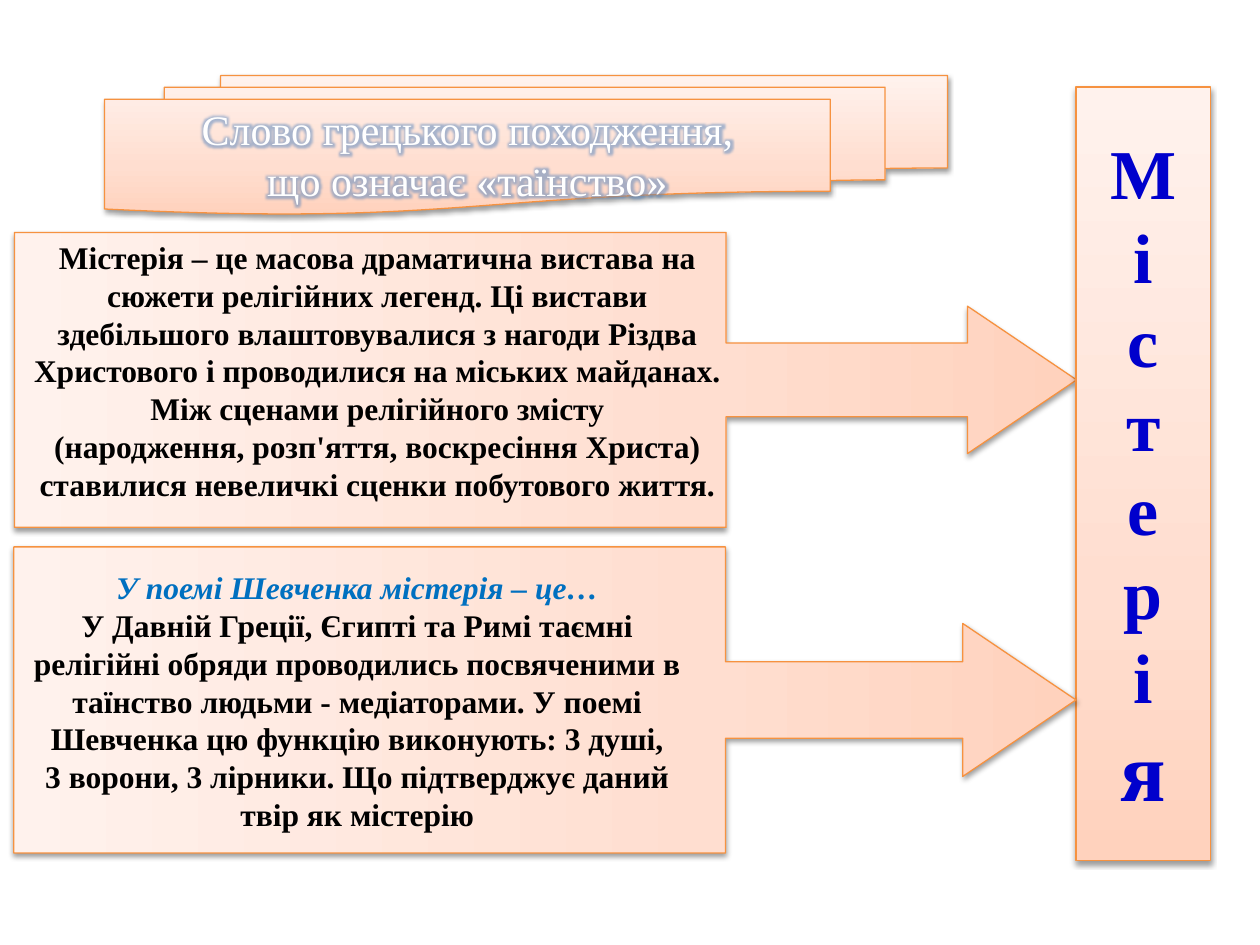
import dataclasses

import pptx
import pptx.dml.color
import pptx.enum.shapes
import pptx.enum.text
import pptx.oxml
import pptx.oxml.ns
import pptx.util

SHAPES = pptx.enum.shapes.MSO_SHAPE
ANCHOR = pptx.enum.text.MSO_ANCHOR
NAMESPACE = pptx.oxml.ns.nsdecls("a")

DEFINITION = (
    "Містерія – це масова драматична вистава на сюжети релігійних легенд. "
    "Ці вистави здебільшого влаштовувалися з нагоди Різдва Христового "
    "і проводилися на міських майданах. Між сценами релігійного змісту\v"
    "(народження, розп'яття, воскресіння Христа) ставилися невеличкі сценки "
    "побутового життя."
)
POEM_HEADING = "У поемі Шевченка містерія – це…"
POEM_TEXT = (
    "У Давній Греції, Єгипті та Римі таємні релігійні обряди проводились "
    "посвяченими в таїнство людьми - медіаторами. У поемі Шевченка цю функцію "
    "виконують: 3 душі,\v3 ворони, 3 лірники. Що підтверджує даний твір як містерію"
)


@dataclasses.dataclass(frozen=True)
class Theme:
    font: str = "Times New Roman"
    title: str = "FFFFFF"
    glow: str = "4F81BD"
    word: str = "0000CC"
    heading: str = "0070C0"
    body: str = "000000"
    line: str = "F69240"
    gradient: tuple = ((0, "FFD2BD"), (35, "FFDED0"), (100, "FFF2ED"))
    title_size: int = 24
    body_size: int = 18
    word_size: int = 40
    last_letter_size: int = 48


THEME = Theme()


def set_values(target, values):
    for name, value in values.items():
        setattr(target, name, value)


def shares(presentation, left, top, width, height):
    horizontal = presentation.slide_width / 100
    vertical = presentation.slide_height / 100
    return [
        pptx.util.Emu(round(share * unit))
        for share, unit in zip(
            (left, top, width, height), (horizontal, vertical) * 2
        )
    ]


def add_run(paragraph, text, size, color, **values):
    run = paragraph.add_run()
    run.text = text
    set_values(
        run.font, {"name": THEME.font, "size": pptx.util.Pt(size), **values}
    )
    run.font.color.rgb = pptx.dml.color.RGBColor.from_string(color)
    return run


def add_paragraph(text_frame, position):
    paragraph = (
        text_frame.paragraphs[0] if position == 0 else text_frame.add_paragraph()
    )
    paragraph.alignment = pptx.enum.text.PP_ALIGN.CENTER
    return paragraph


def add_peach_shape(slide, kind, box, rotation=0, adjustments=()):
    shape = slide.shapes.add_shape(kind, *box)
    shape.rotation = rotation
    for index, value in enumerate(adjustments):
        shape.adjustments[index] = value
    shape.fill.gradient()
    shape.fill.gradient_angle = 90
    properties = shape._element.spPr
    stops = properties.find(".//" + pptx.oxml.ns.qn("a:gsLst"))
    stops.clear()
    for position, color in THEME.gradient:
        stops.append(pptx.oxml.parse_xml(
            f'<a:gs {NAMESPACE} pos="{position * 1000}">'
            f'<a:srgbClr val="{color}"/></a:gs>'
        ))
    shape.line.width = pptx.util.Pt(0.75)
    shape.line.color.rgb = pptx.dml.color.RGBColor.from_string(THEME.line)
    shape.shadow.inherit = False
    properties.find(pptx.oxml.ns.qn("a:effectLst")).append(pptx.oxml.parse_xml(
        f'<a:outerShdw {NAMESPACE} blurRad="40000" dist="20000" dir="5400000" '
        'rotWithShape="0"><a:srgbClr val="000000"><a:alpha val="38000"/>'
        '</a:srgbClr></a:outerShdw>'
    ))
    return shape


def add_arrow_callout(slide, box):
    add_peach_shape(
        slide, SHAPES.DOWN_ARROW_CALLOUT, box, 270, (0.25, 0.25, 0.37, 0.67)
    )


def add_glow(run):
    run.font.fill._xPr.find(pptx.oxml.ns.qn("a:solidFill")).addnext(
        pptx.oxml.parse_xml(
            f'<a:effectLst {NAMESPACE}><a:glow rad="63500">'
            f'<a:srgbClr val="{THEME.glow}"><a:alpha val="50000"/></a:srgbClr>'
            '</a:glow></a:effectLst>'
        )
    )


def fill_title(slide, box, lines):
    title = slide.shapes.title
    set_values(title, dict(zip(("left", "top", "width", "height"), box)))
    set_values(title.text_frame, {
        "vertical_anchor": ANCHOR.MIDDLE,
        "auto_size": pptx.enum.text.MSO_AUTO_SIZE.NONE,
        "margin_top": 0,
        "margin_bottom": 0,
    })
    for position, text in enumerate(lines):
        paragraph = add_paragraph(title.text_frame, position)
        add_glow(add_run(paragraph, text, THEME.title_size, THEME.title))
    slide.shapes._spTree.append(title._element)


def add_vertical_word(slide, box):
    shape = add_peach_shape(slide, SHAPES.RECTANGLE, box)
    shape.text_frame.vertical_anchor = ANCHOR.MIDDLE
    shape.text_frame._txBody.bodyPr.set("vert", "wordArtVert")
    paragraph = add_paragraph(shape.text_frame, 0)
    add_run(paragraph, "Містері", THEME.word_size, THEME.word, bold=True)
    add_run(paragraph, "я", THEME.last_letter_size, THEME.word, bold=True)


def add_text(slide, box, paragraphs):
    text_frame = slide.shapes.add_textbox(*box).text_frame
    text_frame.word_wrap = True
    for position, (text, color, italic) in enumerate(paragraphs):
        paragraph = add_paragraph(text_frame, position)
        for index, part in enumerate(text.split("\v")):
            if index:
                paragraph.add_line_break()
            add_run(
                paragraph, part, THEME.body_size, color, bold=True, italic=italic
            )


def main():
    presentation = pptx.Presentation()
    set_values(presentation, {
        "slide_width": pptx.util.Inches(10),
        "slide_height": pptx.util.Inches(7.5),
    })
    slide = presentation.slides.add_slide(presentation.slide_layouts[5])

    def box(*values):
        return shares(presentation, *values)

    add_arrow_callout(slide, box(31.6, -16, 23.4, 112.4))
    add_peach_shape(
        slide, SHAPES.FLOWCHART_MULTIDOCUMENT, box(8.3, 8, 66.9, 14.67)
    )
    fill_title(
        slide, box(8.3, 11.3, 57.6, 10),
        ("Слово грецького походження,", "що означає «таїнство»"),
    )
    add_vertical_word(slide, box(85.4, 9.2, 10.7, 81.87))
    add_arrow_callout(slide, box(31.1, 17.87, 24.3, 112.4))
    add_text(
        slide, box(1.2, 24.53, 57.5, 29.6), [(DEFINITION, THEME.body, False)]
    )
    add_text(slide, box(0.4, 59.47, 55.9, 29.6), [
        (POEM_HEADING, THEME.heading, True),
        (POEM_TEXT, THEME.body, False),
    ])
    presentation.save("out.pptx")


if __name__ == "__main__":
    main()
